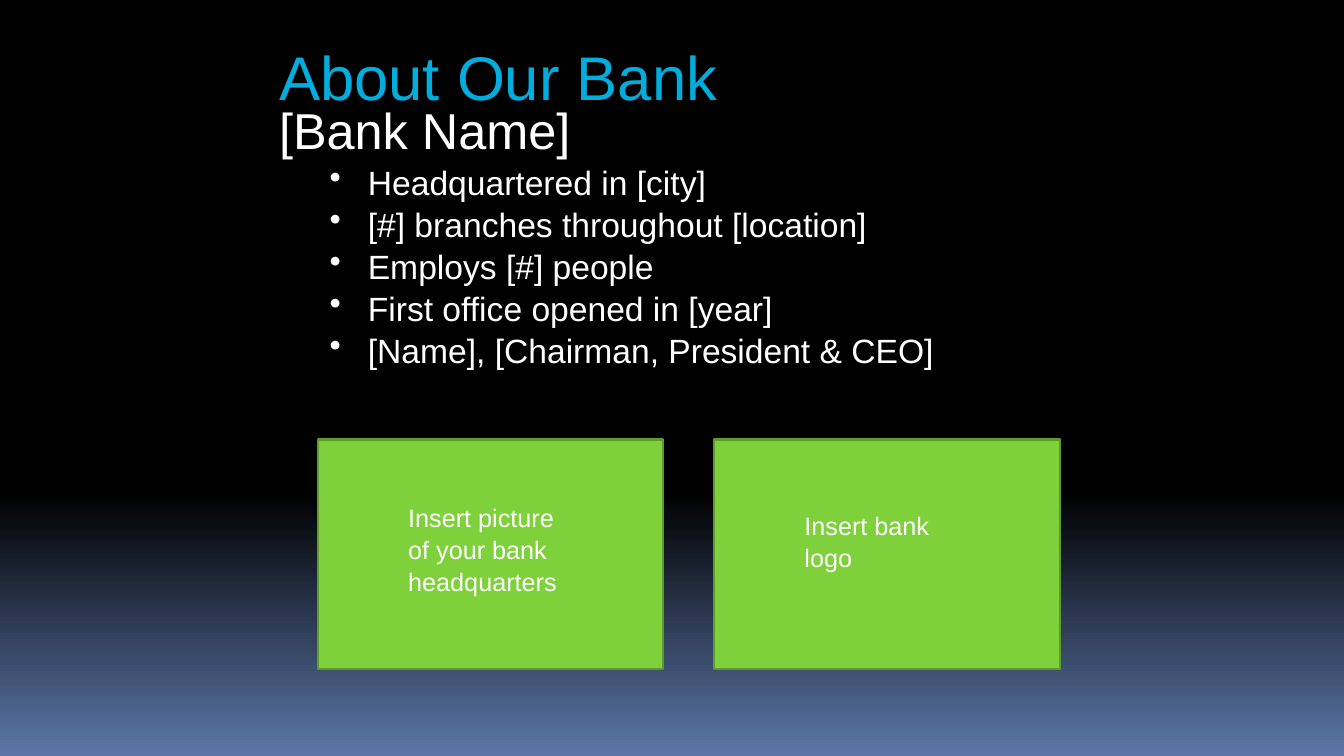
import pptx
import pptx.util
import pptx.dml.color
import pptx.enum.shapes
import pptx.enum.text
import pptx.oxml.ns
import lxml.etree

Inches = pptx.util.Inches
Pt = pptx.util.Pt
RGBColor = pptx.dml.color.RGBColor
Anchor = pptx.enum.text.MSO_ANCHOR

BLACK = RGBColor(0x00, 0x00, 0x00)
DUSK_BLUE = RGBColor(0x5B, 0x77, 0xA8)
CYAN = RGBColor(0x00, 0xAD, 0xDC)
WHITE = RGBColor(0xFF, 0xFF, 0xFF)
GREEN = RGBColor(0x7F, 0xD1, 0x3B)
DARK_GREEN = RGBColor(0x5E, 0x9B, 0x2C)

HEADING = "About Our Bank"
BANK_NAME = "[Bank Name]"
FACTS = [
    "Headquartered in [city]",
    "[#] branches throughout [location]",
    "Employs [#] people",
    "First office opened in [year]",
    "[Name], [Chairman, President & CEO]",
]
PANELS = [
    ("Insert picture of your bank headquarters", 4.92, 1.01),
    ("Insert bank logo", 5.0, 0.71),
]

PANEL_LEFT, PANEL_TOP = 3.15, 4.36
PANEL_WIDTH, PANEL_HEIGHT = 3.43, 2.28
PANEL_STEP = 3.93
CAPTION_INSET, CAPTION_WIDTH = 0.8, 1.85


def add_frame(slide, left, top, width, height, anchor=Anchor.TOP):
    box = slide.shapes.add_textbox(
        Inches(left), Inches(top), Inches(width), Inches(height))
    frame = box.text_frame
    frame.word_wrap = True
    frame.vertical_anchor = anchor
    return frame


def write(text, *, paragraph, size, color=WHITE, spacing=None, bullet=False):
    run = paragraph.add_run()
    run.text = text
    run.font.name = "Arial"
    run.font.size = Pt(size)
    run.font.color.rgb = color
    if spacing is not None:
        paragraph.line_spacing = spacing
    if bullet:
        paragraph.level = 1
        properties = paragraph._p.get_or_add_pPr()
        properties.set("marL", str(Inches(0.88)))
        properties.set("indent", str(Inches(-0.38)))
        mark = lxml.etree.SubElement(properties, pptx.oxml.ns.qn("a:buChar"))
        mark.set("char", "•")


def paint_background(slide):
    fill = slide.background.fill
    fill.gradient()
    fill.gradient_angle = 270
    for stop, position, color in zip(
            fill.gradient_stops, (0.65, 1.0), (BLACK, DUSK_BLUE)):
        stop.position = position
        stop.color.rgb = color


def add_panel(slide, left):
    panel = slide.shapes.add_shape(
        pptx.enum.shapes.MSO_SHAPE.RECTANGLE, Inches(left), Inches(PANEL_TOP),
        Inches(PANEL_WIDTH), Inches(PANEL_HEIGHT))
    panel.shadow.inherit = False
    panel.fill.solid()
    panel.fill.fore_color.rgb = GREEN
    panel.line.color.rgb = DARK_GREEN
    panel.line.width = Pt(1.5)


def main():
    deck = pptx.Presentation()
    deck.slide_width = Inches(13.33)
    deck.slide_height = Inches(7.5)
    slide = deck.slides.add_slide(deck.slide_layouts[6])
    paint_background(slide)

    heading = add_frame(slide, 2.67, 0.33, 8.5, 0.79, Anchor.BOTTOM)
    heading.margin_bottom = 0
    write(HEADING, paragraph=heading.paragraphs[0], size=44, color=CYAN)

    profile = add_frame(slide, 2.67, 1.12, 8.58, 2.63)
    write(BANK_NAME, paragraph=profile.paragraphs[0], size=36, spacing=Pt(30))
    for fact in FACTS:
        write(fact, paragraph=profile.add_paragraph(), size=24,
              spacing=Pt(30), bullet=True)

    for index, (caption, top, height) in enumerate(PANELS):
        left = PANEL_LEFT + index * PANEL_STEP
        add_panel(slide, left)
        frame = add_frame(slide, left + CAPTION_INSET, top, CAPTION_WIDTH, height)
        write(caption, paragraph=frame.paragraphs[0], size=18, spacing=1.05)

    deck.save("out.pptx")


if __name__ == "__main__":
    main()
